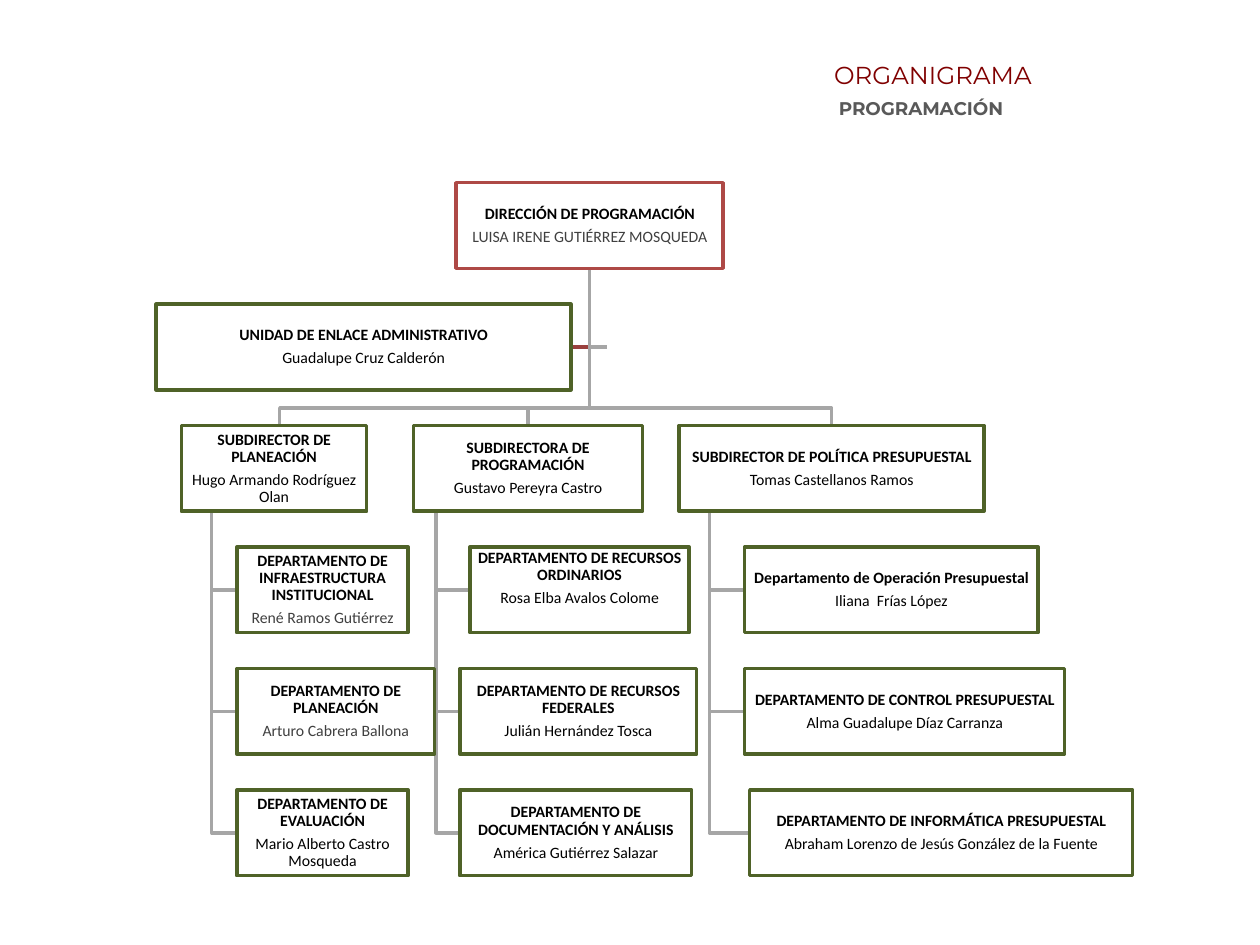
from pptx import Presentation
from pptx import util as u
from pptx.dml import color
from pptx.enum import shapes, text

I = u.Inches
GREEN, RED, GRAY, DARK, BLACK = "4F6228", "AE4946", "A6A6A6", "404040", "000000"
HIGH = 0.68
STEP = 4.82 / 5
DROP = 0.14


def hue(code):
    return color.RGBColor.from_string(code)


def write(par, words, size=9, font="Calibri", tint=BLACK, bold=False, lead=1, after=0):
    par.alignment = text.PP_ALIGN.CENTER
    par.line_spacing = lead
    par.space_after = u.Pt(after)
    run = par.add_run()
    run.text = words
    run.font.size = u.Pt(size)
    run.font.name = font
    run.font.bold = bold
    run.font.color.rgb = hue(tint)


def label(slide, x, y, w, h, words, **form):
    frame = slide.shapes.add_textbox(I(x), I(y), I(w), I(h)).text_frame
    frame.word_wrap = True
    write(frame.paragraphs[0], words, font="Montserrat", **form)


def wire(slide, points, tint=GRAY):
    dots = [(I(x), I(y)) for x, y in points]
    pen = slide.shapes.build_freeform(*dots[0])
    pen.add_line_segments(dots[1:], close=False)
    line = pen.convert_to_shape()
    line.shadow.inherit = False
    line.fill.background()
    line.line.color.rgb = hue(tint)
    line.line.width = u.Pt(2)


def card(slide, x, y, w, post, name, edge=GREEN, tint=BLACK, foot=0.01):
    box = slide.shapes.add_shape(
        shapes.MSO_SHAPE.RECTANGLE, I(x), I(y), I(w), I(HIGH))
    box.shadow.inherit = False
    box.fill.solid()
    box.fill.fore_color.rgb = hue("FFFFFF")
    box.line.color.rgb = hue(edge)
    box.line.width = u.Pt(2)
    frame = box.text_frame
    frame.word_wrap = True
    frame.vertical_anchor = text.MSO_ANCHOR.MIDDLE
    frame.margin_left = frame.margin_right = frame.margin_top = I(0.01)
    frame.margin_bottom = I(foot)
    write(frame.paragraphs[0], post, bold=True, lead=0.9, after=3.4)
    write(frame.add_paragraph(), name, tint=tint, lead=0.9, after=3.4)


def title(slide, x, y):
    label(slide, x + 0.79, y, 3.99, 0.34, "ORGANIGRAMA", size=14, tint="800000")
    label(slide, x, y + 0.29, 5.38, 0.28, "PROGRAMACIÓN", size=10.5,
          tint="595959", bold=True)


def top(slide, x, y, ends):
    mid, base = x + 1.06, y + HIGH
    side = y + STEP + HIGH / 2
    floor = y + 2 * STEP
    for shift, tint in ((DROP, GRAY), (-DROP, "9A403E")):
        wire(slide, [(mid, base), (mid, side), (mid + shift, side)], tint)
    for end in ends:
        wire(slide, [(mid, base), (mid, floor - DROP), (end, floor - DROP),
                     (end, floor)])
    card(slide, x, y, 2.12, "DIRECCIÓN DE PROGRAMACIÓN",
         "LUISA IRENE GUTIÉRREZ MOSQUEDA", edge=RED, tint=DARK)
    card(slide, x - 2.38, y + STEP, 3.29, "UNIDAD DE ENLACE ADMINISTRATIVO",
         "Guadalupe Cruz Calderón")


def branch(slide, x, y, w, post, name, stem, parts):
    trunk = x + stem
    rows = [(y + STEP * i, part) for i, part in enumerate(parts, 1)]
    for row, (gap, *_) in rows:
        mid = row + HIGH / 2
        wire(slide, [(trunk, y + HIGH), (trunk, mid), (x + gap, mid)])
    card(slide, x, y, w, post, name)
    for row, (gap, wide, job, who, form) in rows:
        card(slide, x + gap, row, wide, job, who, **form)


BRANCHES = [
    (5.39, 2.42, "SUBDIRECTOR DE POLÍTICA PRESUPUESTAL", "Tomas Castellanos Ramos", 0.24, [
        (0.52, 2.33, "Departamento de Operación Presupuestal", "Iliana  Frías López", {}),
        (0.52, 2.54, "DEPARTAMENTO DE CONTROL PRESUPUESTAL",
         "Alma Guadalupe Díaz Carranza", {}),
        (0.56, 3.04, "DEPARTAMENTO DE INFORMÁTICA PRESUPUESTAL",
         "Abraham Lorenzo de Jesús González de la Fuente", {}),
    ]),
    (3.28, 1.82, "SUBDIRECTORA DE PROGRAMACIÓN", "Gustavo Pereyra Castro", 0.18, [
        (0.45, 1.74, "DEPARTAMENTO DE RECURSOS ORDINARIOS",
         "Rosa Elba Avalos Colome", {"foot": 0.19}),
        (0.37, 1.88, "DEPARTAMENTO DE RECURSOS FEDERALES",
         "Julián Hernández Tosca", {}),
        (0.37, 1.84, "DEPARTAMENTO DE DOCUMENTACIÓN Y ANÁLISIS",
         "América Gutiérrez Salazar", {}),
    ]),
    (1.44, 1.47, "SUBDIRECTOR DE PLANEACIÓN", "Hugo Armando Rodríguez Olan", 0.24, [
        (0.44, 1.36, "DEPARTAMENTO DE INFRAESTRUCTURA INSTITUCIONAL",
         "René Ramos Gutiérrez", {"tint": DARK}),
        (0.44, 1.57, "DEPARTAMENTO DE PLANEACIÓN",
         "Arturo Cabrera Ballona", {"tint": DARK}),
        (0.44, 1.36, "DEPARTAMENTO DE EVALUACIÓN",
         "Mario Alberto Castro Mosqueda", {}),
    ]),
]


def main():
    deck = Presentation()
    deck.slide_width, deck.slide_height = I(10), I(7.5)
    slide = deck.slides.add_slide(deck.slide_layouts[6])
    title(slide, 4.62, 0.43)
    top(slide, 3.62, 1.45, (6.6, 4.19, 2.22))
    for x, *rest in BRANCHES:
        branch(slide, x, 1.45 + 2 * STEP, *rest)
    deck.save("out.pptx")


if __name__ == "__main__":
    main()
